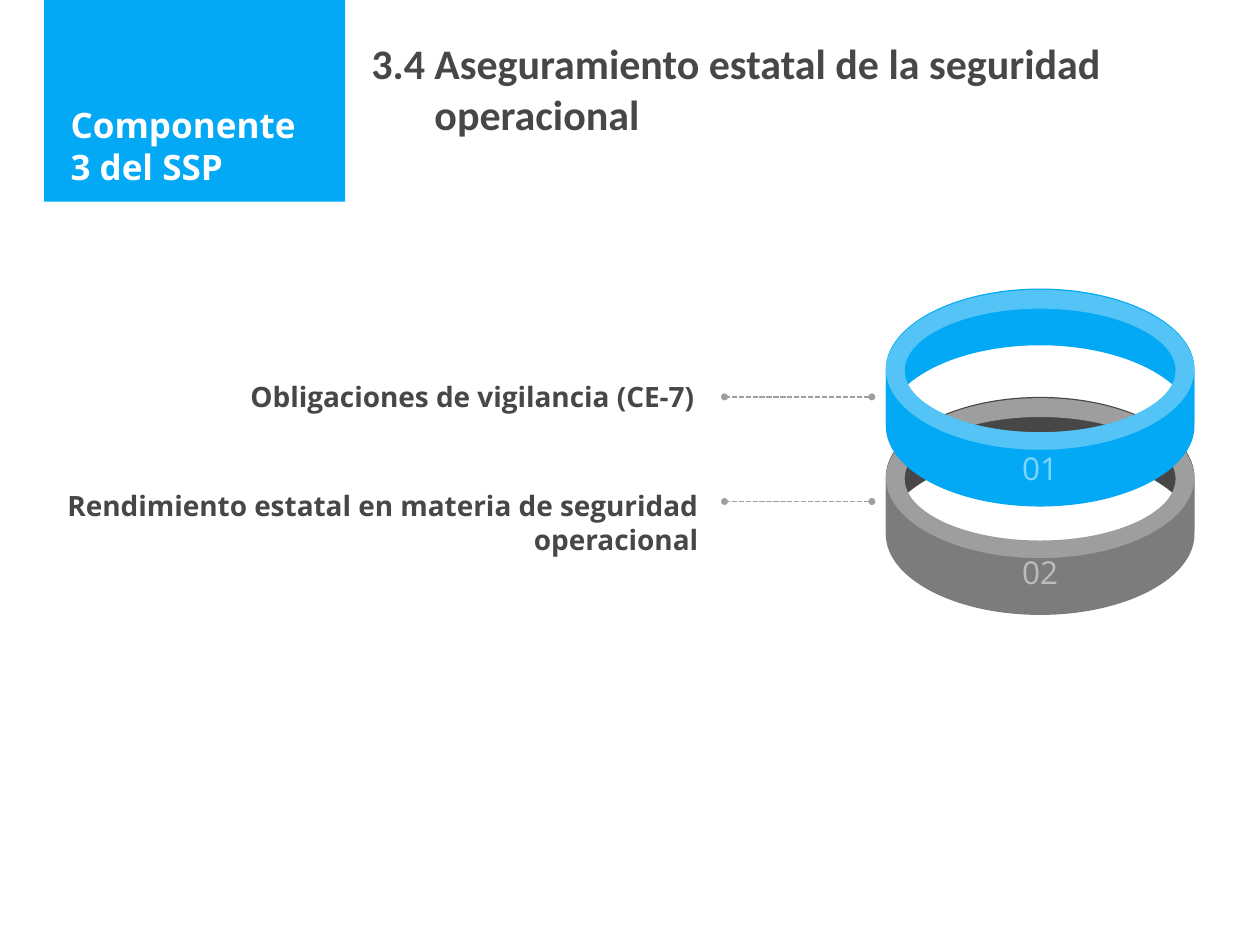
from lxml import etree
from pptx import Presentation
from pptx.dml.color import RGBColor
from pptx.enum.dml import MSO_LINE
from pptx.enum.shapes import MSO_CONNECTOR, MSO_SHAPE
from pptx.enum.text import MSO_ANCHOR, MSO_AUTO_SIZE, PP_ALIGN
from pptx.oxml.ns import qn
from pptx.util import Inches, Pt

RECTANGLE = MSO_SHAPE.RECTANGLE
STRAIGHT = MSO_CONNECTOR.STRAIGHT
DASHED = MSO_LINE.SQUARE_DOT
LEFT, CENTER, RIGHT = PP_ALIGN.LEFT, PP_ALIGN.CENTER, PP_ALIGN.RIGHT
MIDDLE, BOTTOM = MSO_ANCHOR.MIDDLE, MSO_ANCHOR.BOTTOM
NO_FIT, GROW = MSO_AUTO_SIZE.NONE, MSO_AUTO_SIZE.SHAPE_TO_FIT_TEXT
TITLE_ONLY = 5

COLORS = {"blue": "03A9F5", "light blue": "54C3F6", "dark": "474747",
          "gray": "7C7C7C", "light gray": "9E9E9E", "white": "FFFFFF"}

MARGIN = 0.35
RING_X, RADIUS_X, RADIUS_Y = 8.255, 1.225, 0.64
RIM, BAND_HEIGHT, RIM_DROP = 0.15, 0.45, 0.01
KAPPA = 0.55  # Bezier handle length for a quarter of an ellipse

# Lower ring first, so that the upper one covers it.
ITEMS = [
    {"number": "02", "text": "Rendimiento estatal en materia de seguridad operacional",
     "ring_y": 3.79, "label_y": 3.83, "label_width": 5.29, "line_y": 3.98,
     "number_inset": 0.4, "back": "dark", "rim": "light gray", "front": "gray"},
    {"number": "01", "text": "Obligaciones de vigilancia (CE-7)",
     "ring_y": 2.93, "label_y": 2.96, "label_width": 5.26, "line_y": 3.15,
     "number_inset": 0.48, "back": "blue", "rim": "light blue", "front": "blue"},
]


def rgb(name):
    return RGBColor.from_string(COLORS[name])


def paint(shape, color):
    shape.fill.solid()
    shape.fill.fore_color.rgb = rgb(color)
    shape.line.fill.background()
    shape.shadow.inherit = False


def write(frame, text, size, color, align=LEFT, font="Open Sans", bold=True):
    frame.word_wrap = True
    paragraph = frame.paragraphs[0]
    paragraph.text = text
    paragraph.alignment = align
    paragraph.line_spacing = 1.0
    paragraph.font.name = font
    paragraph.font.size = Pt(size)
    paragraph.font.bold = bold
    paragraph.font.color.rgb = rgb(color)
    return paragraph


def add_text(slide, box, text, size, color, **style):
    frame = slide.shapes.add_textbox(*map(Inches, box)).text_frame
    return frame, write(frame, text, size, color, **style)


def half_ellipse(y, radius_x, radius_y):
    """Bezier points from the right end to the left one; a negative radius_y goes over the top."""
    unit = [(1, 0), (1, KAPPA), (KAPPA, 1), (0, 1), (-KAPPA, 1), (-1, KAPPA), (-1, 0)]
    return [(RING_X + radius_x * u, y + radius_y * v) for u, v in unit]


def add_curved(slide, contours, color):
    """Draw contours given as a start point followed by triples of Bezier points."""
    contours = [[(Inches(x), Inches(y)) for x, y in contour] for contour in contours]
    builder = slide.shapes.build_freeform(*contours[0][0])
    for index, contour in enumerate(contours):
        if index:
            builder.move_to(*contour[0])
        builder.add_line_segments(contour[1:], close=True)
    shape = builder.convert_to_shape()
    segments = list(shape.element.iter(qn("a:lnTo")))
    for first in range(0, len(segments), 3):
        curve = etree.Element(qn("a:cubicBezTo"))
        segments[first].addprevious(curve)
        for segment in segments[first:first + 3]:
            curve.append(segment[0])
            segment.getparent().remove(segment)
    paint(shape, color)
    return shape


def add_band(slide, y, side, color):
    """Draw the half wall of a ring: side 1 is the front, -1 the back."""
    upper = half_ellipse(y, RADIUS_X, side * RADIUS_Y)
    lower = half_ellipse(y + BAND_HEIGHT, RADIUS_X, side * RADIUS_Y)[::-1]
    straight_side = [upper[-1], lower[0], lower[0]]
    return add_curved(slide, [upper + straight_side + lower[1:]], color)


def add_rim(slide, y, color):
    def ellipse(radius_x, radius_y):
        return (half_ellipse(y, radius_x, radius_y)
                + half_ellipse(y, radius_x, -radius_y)[-2::-1])

    outer = ellipse(RADIUS_X, RADIUS_Y)
    inner = ellipse(RADIUS_X - RIM, RADIUS_Y - RIM)[::-1]
    add_curved(slide, [outer, inner], color)


def add_number(band, number, inset):
    frame = band.text_frame
    frame.margin_left = frame.margin_right = frame.margin_bottom = 0
    frame.margin_top = Inches(inset)
    frame.vertical_anchor = MIDDLE
    paragraph = write(frame, number, 18, "white", align=CENTER, bold=False)
    tint = next(paragraph._p.iter(qn("a:srgbClr")))
    etree.SubElement(tint, qn("a:alpha"), val="50000")


def add_ring(slide, item):
    y = item["ring_y"]
    add_band(slide, y, -1, item["back"])
    add_rim(slide, y + RIM_DROP, item["rim"])
    front = add_band(slide, y, 1, item["front"])
    add_number(front, item["number"], item["number_inset"])


def add_leader(slide, y):
    leader = slide.shapes.add_connector(
        STRAIGHT, Inches(6.92), Inches(y), Inches(5.75), Inches(y))
    leader.line.color.rgb = rgb("light gray")
    leader.line.width = Pt(1)
    leader.line.dash_style = DASHED
    line = leader.line._get_or_add_ln()
    for end in ("a:headEnd", "a:tailEnd"):
        etree.SubElement(line, qn(end), type="oval", w="sm", len="sm")
    etree.SubElement(line.getparent(), qn("a:effectLst"))


def add_header(slide):
    panel = slide.shapes.add_shape(
        RECTANGLE, Inches(MARGIN), Inches(-0.01), Inches(2.39), Inches(1.61))
    paint(panel, "blue")
    title = slide.shapes.title
    title.left, title.top, title.width, title.height = map(Inches, (0.46, 0.08, 2.14, 1.46))
    write(title.text_frame, "Componente 3 del SSP", 20, "white")
    title.text_frame.vertical_anchor = BOTTOM
    title.text_frame.auto_size = NO_FIT
    panel.element.addnext(title.element)


def add_heading(slide):
    frame, paragraph = add_text(
        slide, (2.85, 0.25, 7, 0.91),
        "3.4\tAseguramiento estatal de la seguridad operacional",
        24, "dark", font="Calibri")
    frame.auto_size = GROW
    hanging = Inches(0.5)
    properties = paragraph._p.get_or_add_pPr()
    properties.set("marL", str(hanging))
    properties.set("indent", str(-hanging))


def main():
    presentation = Presentation()
    presentation.slide_width, presentation.slide_height = Inches(10), Inches(7.5)
    slide = presentation.slides.add_slide(presentation.slide_layouts[TITLE_ONLY])
    add_header(slide)
    for item in ITEMS:
        add_ring(slide, item)
        add_text(slide, (MARGIN, item["label_y"], item["label_width"], 0.75),
                 item["text"], 16, "dark", align=RIGHT)
        add_leader(slide, item["line_y"])
    add_heading(slide)
    presentation.save("out.pptx")


if __name__ == "__main__":
    main()
